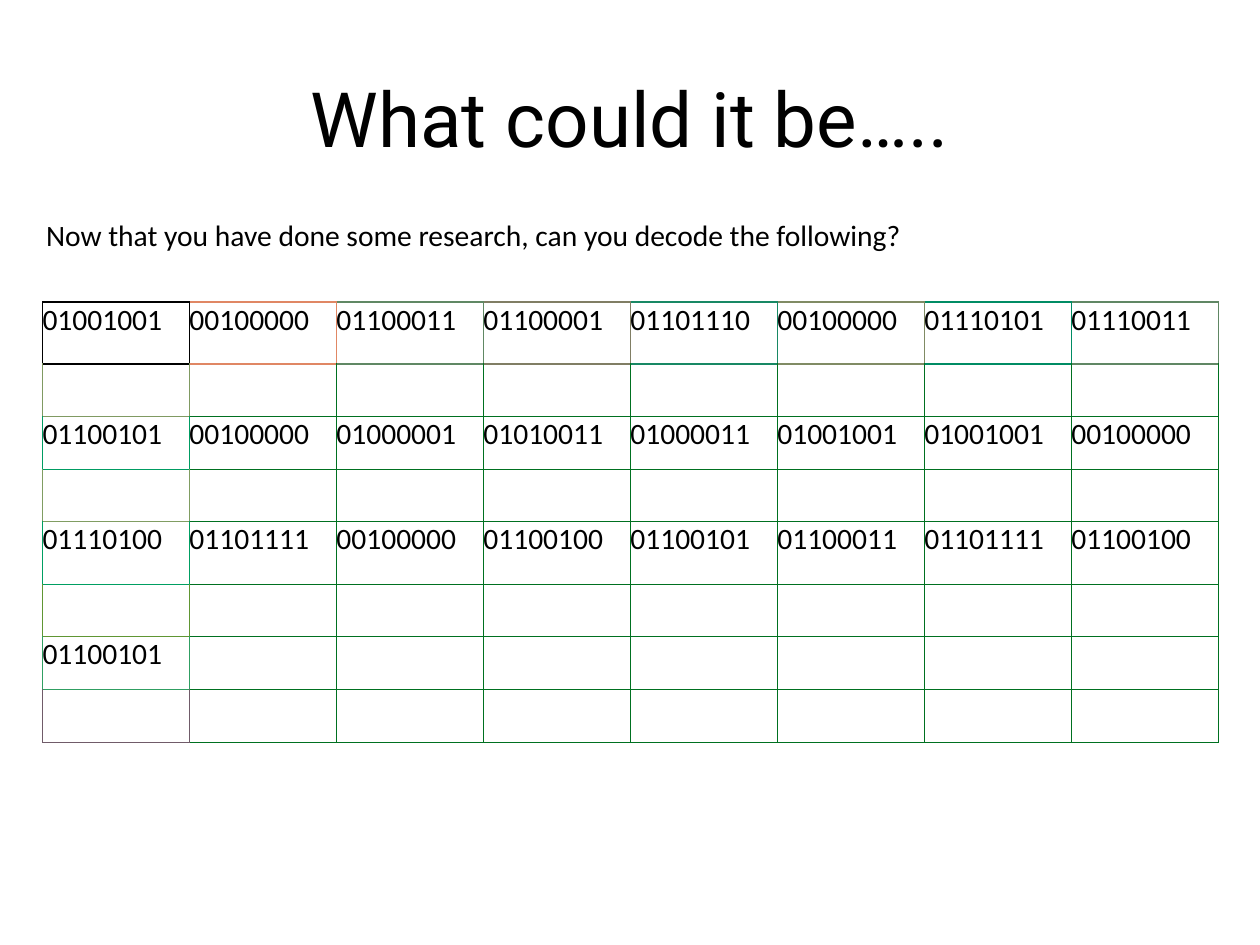
import pptx
import pptx.util
import pptx.dml.color
import pptx.enum.text
import lxml.etree
from pptx.oxml.ns import qn

Inches, Pt = pptx.util.Inches, pptx.util.Pt
RGBColor = pptx.dml.color.RGBColor
BLACK = RGBColor(0x00, 0x00, 0x00)
GREEN = RGBColor(0x00, 0x70, 0x20)

# Border colours of the first row and the first column; other cells are green
TOP_ROW = [RGBColor.from_string(c) for c in (
    "000000", "E08764", "608864", "807E64", "188864", "808B64", "008C64", "608764")]
LEFT_COLUMN = [RGBColor.from_string(c) for c in (
    "000000", "809A62", "009C62", "809D62", "009F62", "609633", "309F62", "705B69")]

# Every second table row holds binary codes, the rows between stay open for answers
CODES = [
    "01001001 00100000 01100011 01100001 01101110 00100000 01110101 01110011",
    "01100101 00100000 01000001 01010011 01000011 01001001 01001001 00100000",
    "01110100 01101111 00100000 01100100 01100101 01100011 01101111 01100100",
    "01100101",
]
ROW_HEIGHTS = [0.7, 0.59, 0.6, 0.59, 0.71, 0.59, 0.6, 0.59]
COLS, ROWS = 8, len(ROW_HEIGHTS)
W, H = 14.22, 10.67
TABLE_W = 13.27

prs = pptx.Presentation()
prs.slide_width, prs.slide_height = Inches(W), Inches(H)
s = prs.slides.add_slide(prs.slide_layouts[6])


def add_text(text, left, top, width, height, size, font):
    sp = s.shapes.add_textbox(Inches(left), Inches(top), Inches(width), Inches(height))
    tf = sp.text_frame
    tf.margin_left = tf.margin_right = tf.margin_top = tf.margin_bottom = Inches(0.07)
    p = tf.paragraphs[0]
    p.text = text
    p.font.size, p.font.name, p.font.color.rgb = Pt(size), font, BLACK
    return tf


def border_color(row, col):
    if row == 0:
        return TOP_ROW[col]
    return LEFT_COLUMN[row] if col == 0 else GREEN


# Title
tf = add_text("What could it be…..", W * 0.05, H * 0.04, W * 0.9, H / 6, 62, "Roboto")
tf.word_wrap = True
tf.vertical_anchor = pptx.enum.text.MSO_ANCHOR.MIDDLE
tf.paragraphs[0].alignment = pptx.enum.text.PP_ALIGN.CENTER

# Code table
table = s.shapes.add_table(ROWS, COLS, Inches(0.48), Inches(3.41),
                           Inches(TABLE_W), Inches(sum(ROW_HEIGHTS))).table
table.first_row = table.horz_banding = False
for column in table.columns:
    column.width = Inches(TABLE_W / COLS)
for row, height in enumerate(ROW_HEIGHTS):
    table.rows[row].height = Inches(height)
    codes = CODES[row // 2].split() if row % 2 == 0 else []
    for col in range(COLS):
        cell = table.cell(row, col)
        p = cell.text_frame.paragraphs[0]
        if col < len(codes):
            p.text = codes[col]
            cell.margin_left = cell.margin_right = cell.margin_top = cell.margin_bottom = 0
        p.font.size, p.font.name, p.font.color.rgb = Pt(24), "Calibri", BLACK

        # Shared edges take the colour of the neighbour to the left or above
        own = border_color(row, col)
        edges = {"L": border_color(row, max(col - 1, 0)), "R": own,
                 "T": border_color(max(row - 1, 0), col), "B": own}
        tcPr = cell._tc.get_or_add_tcPr()
        for edge, color in edges.items():
            ln = lxml.etree.SubElement(tcPr, qn("a:ln" + edge), w=str(Pt(1)))
            fill = lxml.etree.SubElement(ln, qn("a:solidFill"))
            lxml.etree.SubElement(fill, qn("a:srgbClr"), val=str(color))
        cell.fill.background()

# Question above the table
tf = add_text("Now that you have done some research, can you decode the following?",
              0.45, 2.38, 9.8, 0.55, 24, "Calibri")
tf.word_wrap = False
tf.auto_size = pptx.enum.text.MSO_AUTO_SIZE.SHAPE_TO_FIT_TEXT

prs.save("out.pptx")
